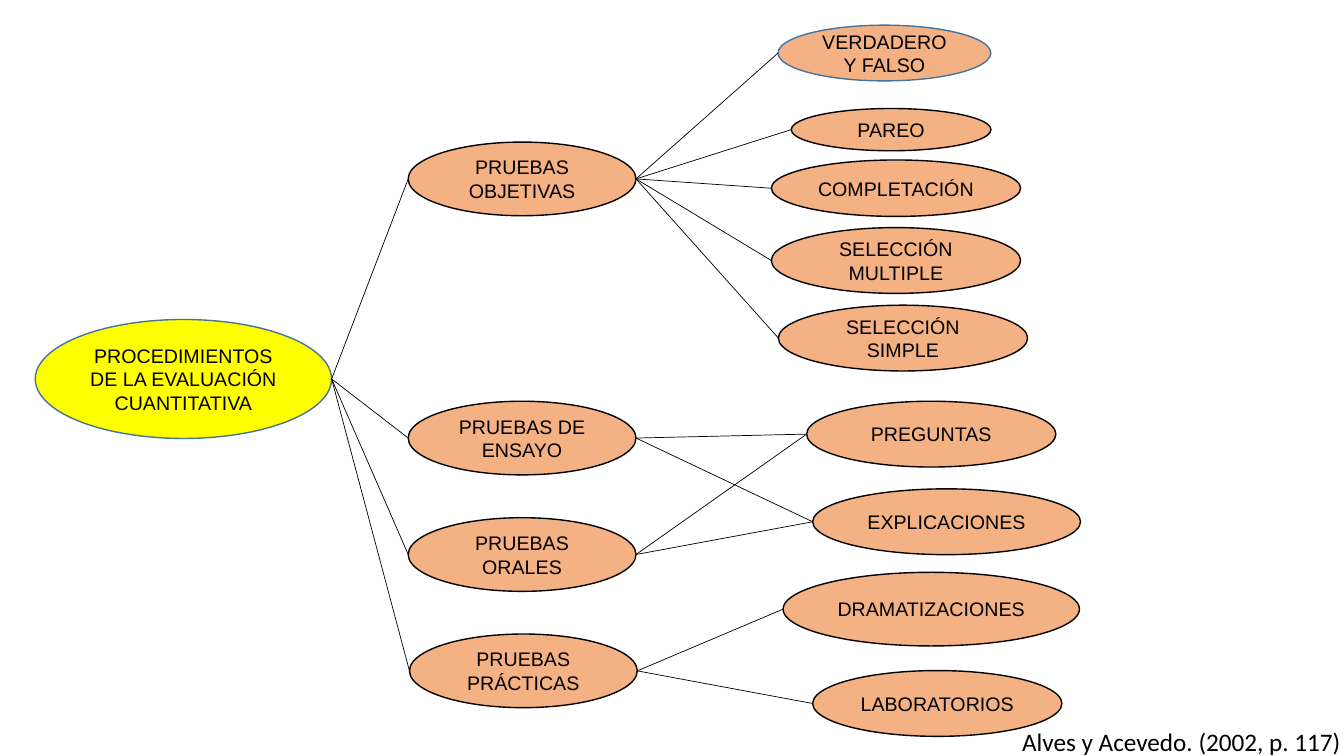
from pptx import Presentation
from pptx.dml.color import RGBColor
from pptx.enum.shapes import MSO_CONNECTOR, MSO_SHAPE
from pptx.enum.text import MSO_ANCHOR, PP_ALIGN
from pptx.oxml import parse_xml
from pptx.oxml.ns import nsdecls
from pptx.util import Pt

COLORS = {"root": "FFFF00", "node": "F4B183", "blue": "43739E", "black": "000000"}

# Left, top, width, height in points
ROOT = ("PROCEDIMIENTOS DE LA EVALUACIÓN CUANTITATIVA", (25.2, 228.2, 211.7, 85))
TESTS = {
    "PRUEBAS OBJETIVAS": (291.6, 101.5, 162.7, 52.6),
    "PRUEBAS DE ENSAYO": (291.6, 286.6, 162.7, 52.6),
    "PRUEBAS ORALES": (291.6, 369.8, 162.7, 52.6),
    "PRUEBAS PRÁCTICAS": (292.5, 452.9, 162.7, 52.6),
}
ITEMS = {
    "VERDADERO Y FALSO": (555.8, 18, 152, 39.8),
    "PAREO": (565.2, 77.5, 142.6, 30.2),
    "COMPLETACIÓN": (551, 114.3, 178, 40.3),
    "SELECCIÓN MULTIPLE": (551, 162.6, 178, 47),
    "SELECCIÓN SIMPLE": (556, 218, 178, 47),
    "PREGUNTAS": (576.2, 286.6, 178, 47),
    "EXPLICACIONES": (580.5, 349.2, 191.3, 47),
    "DRAMATIZACIONES": (559.4, 408.8, 211.7, 52.6),
    "LABORATORIOS": (580.5, 479, 178, 47),
}
# Items that belong to each kind of test
LINKS = {
    "PRUEBAS OBJETIVAS": list(ITEMS)[:5],
    "PRUEBAS DE ENSAYO": ["PREGUNTAS", "EXPLICACIONES"],
    "PRUEBAS ORALES": ["PREGUNTAS", "EXPLICACIONES"],
    "PRUEBAS PRÁCTICAS": ["DRAMATIZACIONES", "LABORATORIOS"],
}
BLUE_EDGE = (ROOT[0], "VERDADERO Y FALSO")


def tint(name):
    return RGBColor.from_string(COLORS[name])


def style(frame, text, font, size, align):
    frame.text = text
    para = frame.paragraphs[0]
    para.alignment = align
    face = para.runs[0].font
    face.name, face.size = font, Pt(size)
    face.color.rgb = tint("black")


def add_node(slide, text, box, fill="node"):
    node = slide.shapes.add_shape(MSO_SHAPE.OVAL, *map(Pt, box))
    node.shadow.inherit = False
    node.fill.solid()
    node.fill.fore_color.rgb = tint(fill)
    node.line.color.rgb = tint("blue" if text in BLUE_EDGE else "black")
    node.line.width = Pt(1)
    frame = node.text_frame
    frame.word_wrap = True
    frame.margin_left = frame.margin_right = Pt(5)
    frame.vertical_anchor = MSO_ANCHOR.MIDDLE
    style(frame, text, "Arial", 14, PP_ALIGN.CENTER)
    return node


def add_link(slide, start, end):
    """Join the right tip of one ellipse to the left tip of another."""
    link = slide.shapes.add_connector(
        MSO_CONNECTOR.STRAIGHT,
        start.left + start.width, start.top + start.height // 2,
        end.left, end.top + end.height // 2)
    link.line.color.rgb = tint("black")
    link.line.width = Pt(0.5)
    link._element.spPr.append(parse_xml(f"<a:effectLst {nsdecls('a')}/>"))


def add_tree(slide):
    root = add_node(slide, *ROOT, "root")
    tests = {text: add_node(slide, text, box) for text, box in TESTS.items()}
    items = {text: add_node(slide, text, box) for text, box in ITEMS.items()}
    for name, test in tests.items():
        add_link(slide, root, test)
        for item in LINKS[name]:
            add_link(slide, test, items[item])


def add_credit(slide, box):
    frame = slide.shapes.add_textbox(*map(Pt, box)).text_frame
    frame.word_wrap = False
    frame.margin_right = frame.margin_bottom = 0
    style(frame, "Alves y Acevedo. (2002, p. 117)", "Calibri", 18, PP_ALIGN.LEFT)


def main():
    deck = Presentation()
    deck.slide_width, deck.slide_height = Pt(960), Pt(540)
    slide = deck.slides.add_slide(deck.slide_layouts[6])
    # Concept tree, then the source of the scheme
    add_tree(slide)
    add_credit(slide, (723, 515.5, 237, 24.5))
    deck.save("out.pptx")


if __name__ == "__main__":
    main()
